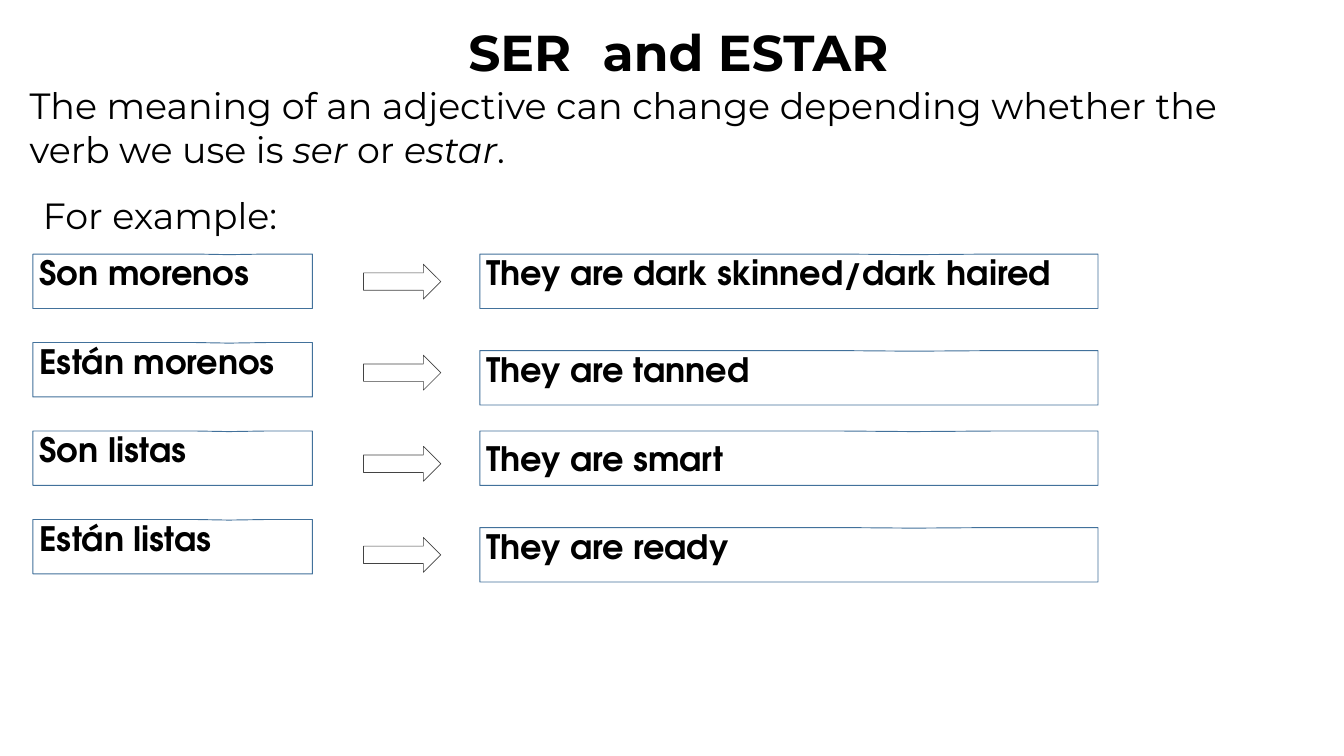
from pptx import Presentation
from pptx.dml.color import RGBColor
from pptx.enum.shapes import MSO_SHAPE
from pptx.enum.text import MSO_ANCHOR, PP_ALIGN
from pptx.util import Pt

HEADING_FONT = "Montserrat"
EXAMPLE_FONT = "TeX Gyre Adventor"
BLACK = "000000"
BOX_BLUE = "42719B"
ARROW_GREY = "434343"
BOX_HEIGHT = 58.3
EXAMPLES = [
    ("Son morenos", "They are dark skinned/dark haired"),
    ("Están morenos", "They are tanned"),
    ("Son listas", "They are smart"),
    ("Están listas", "They are ready"),
]


def color(hex_string):
    """Turn a hex string into a colour."""
    return RGBColor.from_string(hex_string)


def format_font(font, name, size, bold=False):
    """Set the typeface, size and weight of black text."""
    font.name = name
    font.size = Pt(size)
    font.bold = bold
    font.color.rgb = color(BLACK)


def add_heading(slide, left, top, width, height, parts, size=39, bold=False):
    """Add a text box of (text, italic) parts and return its frame."""
    box = slide.shapes.add_textbox(Pt(left), Pt(top), Pt(width), Pt(height))
    frame = box.text_frame
    frame.word_wrap = True
    frame.margin_left = frame.margin_right = Pt(10.8)
    frame.margin_top = frame.margin_bottom = Pt(5.04)
    for text, italic in parts:
        run = frame.paragraphs[0].add_run()
        run.text = text
        format_font(run.font, HEADING_FONT, size, bold)
        run.font.italic = italic
    return frame


def add_title(slide, left, top, width, height):
    """Add the centred slide title."""
    frame = add_heading(slide, left, top, width, height,
                        [("SER\tand ESTAR ", False)], size=54, bold=True)
    frame.vertical_anchor = MSO_ANCHOR.MIDDLE
    frame.paragraphs[0].alignment = PP_ALIGN.CENTER
    frame.paragraphs[0].line_spacing = 0.9


def add_outline(slide, kind, left, top, width, height, line_color, line_width):
    """Add an unfilled preset shape with a thin outline."""
    shape = slide.shapes.add_shape(kind, Pt(left), Pt(top), Pt(width), Pt(height))
    shape.shadow.inherit = False
    shape.fill.background()
    shape.line.color.rgb = color(line_color)
    shape.line.width = Pt(line_width)
    return shape


def add_callout(slide, left, top, width, text, raise_text=True):
    """Add an outlined callout, its text raised or centred."""
    callout = add_outline(slide, MSO_SHAPE.RECTANGULAR_CALLOUT, left, top,
                          width, BOX_HEIGHT, BOX_BLUE, 1)
    callout.adjustments[0] = 0.201
    callout.adjustments[1] = -0.489
    frame = callout.text_frame
    frame.word_wrap = True
    frame.vertical_anchor = MSO_ANCHOR.MIDDLE
    frame.margin_top = Pt(0)
    frame.margin_bottom = Pt(19 if raise_text else 0)
    frame.text = text
    frame.paragraphs[0].alignment = PP_ALIGN.LEFT
    format_font(frame.paragraphs[0].runs[0].font, EXAMPLE_FONT, 36, True)


def add_examples(slide, left, top):
    """Add the rows of phrase, arrow and meaning."""
    for row, (phrase, meaning) in enumerate(EXAMPLES):
        phrase_top = top + 94.8 * row
        meaning_top = phrase_top + 8.64 * (row % 2)
        add_callout(slide, left, phrase_top, 299.5, phrase)
        add_outline(slide, MSO_SHAPE.RIGHT_ARROW, left + 354.2,
                    top + 10.8 + 97.6 * row, 82.8, 37.4, ARROW_GREY, 0.75)
        add_callout(slide, left + 478.8, meaning_top, 662.4, meaning,
                    raise_text=meaning != "They are smart")


def main():
    """Build and save the slide."""
    presentation = Presentation()
    presentation.slide_width = Pt(1440)
    presentation.slide_height = Pt(810)
    slide = presentation.slides.add_slide(presentation.slide_layouts[6])
    add_title(slide, 351.4, 18.7, 766, 81.4)
    add_heading(slide, 20.9, 84.2, 1367.3, 95.8, [
        ("The meaning of an adjective can change depending whether the verb we use is ", False),
        ("ser", True), (" or ", False), ("estar", True), (".", False),
    ])
    add_heading(slide, 35.3, 202.3, 1360, 58.3, [("For example:", False)])
    add_examples(slide, 35.3, 272.2)
    presentation.save("out.pptx")


if __name__ == "__main__":
    main()
